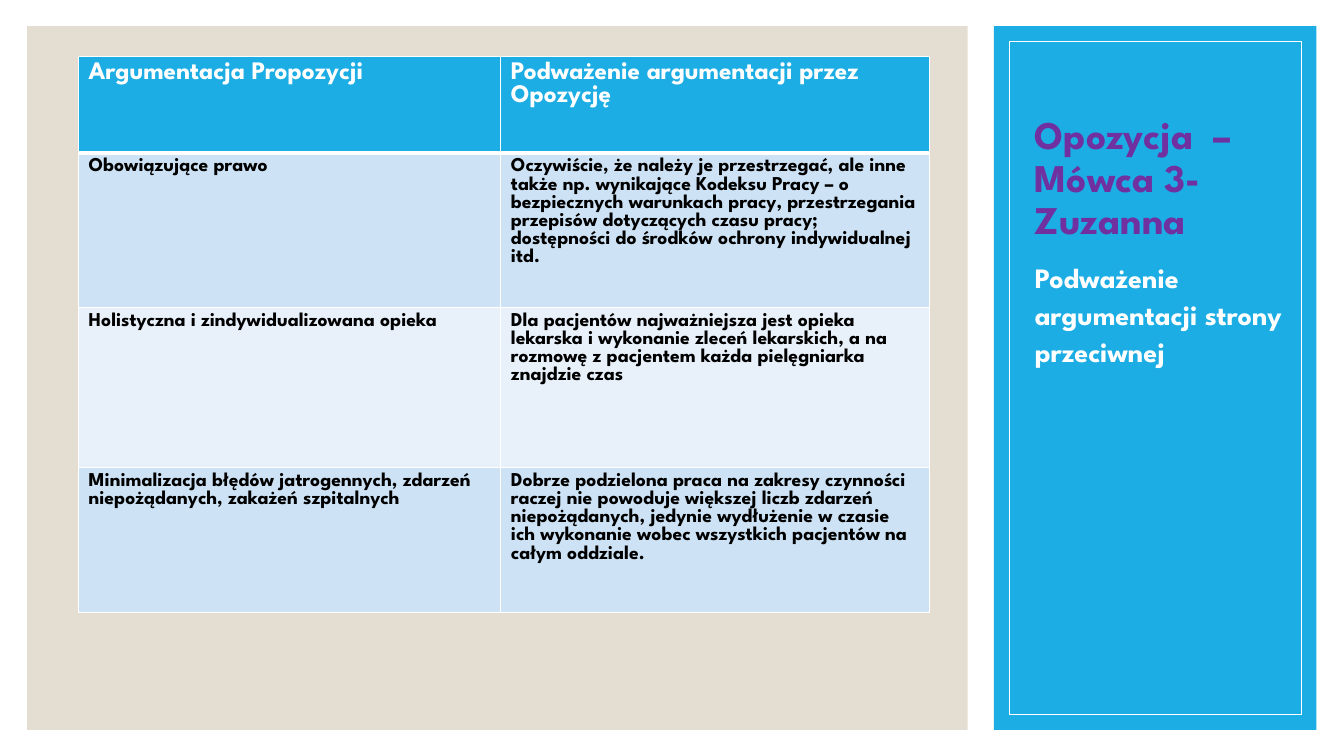
from dataclasses import dataclass
from lxml.etree import SubElement
from pptx import Presentation
from pptx.dml.color import RGBColor
from pptx.enum.shapes import MSO_SHAPE
from pptx.enum.text import MSO_ANCHOR
from pptx.oxml.ns import qn
from pptx.util import Pt


@dataclass(frozen=True)
class Theme:
    """Colours, font and type sizes of the slide."""
    font: str = "League Spartan"
    sand: str = "E3DED1"
    blue: str = "1CADE4"
    white: str = "FFFFFF"
    black: str = "000000"
    purple: str = "7030A0"
    bands: tuple = ("CDE3F5", "E8F1FA")
    title: int = 28
    lead: int = 20
    head: int = 18
    body: int = 14


THEME = Theme()
COLS = (301.7, 306)
HEIGHTS = (69.1, 110.2, 114.5, 103.7)
ROWS = (
    ("Argumentacja Propozycji", "Podważenie argumentacji przez Opozycję"),
    ("Obowiązujące prawo",
     "Oczywiście, że należy je przestrzegać, ale inne także np. wynikające "
     "Kodeksu Pracy – o bezpiecznych warunkach pracy, przestrzegania przepisów "
     "dotyczących czasu pracy; dostępności do środków ochrony indywidualnej  itd."),
    ("Holistyczna i zindywidualizowana opieka",
     "Dla pacjentów najważniejsza jest opieka lekarska i wykonanie zleceń "
     "lekarskich, a na rozmowę z pacjentem każda pielęgniarka znajdzie czas"),
    ("Minimalizacja błędów jatrogennych, zdarzeń niepożądanych, zakażeń szpitalnych",
     "Dobrze podzielona praca na zakresy czynności raczej nie powoduje większej "
     "liczb zdarzeń niepożądanych, jedynie wydłużenie w czasie ich wykonanie "
     "wobec wszystkich pacjentów na całym oddziale."),
)


def add_rect(slide, box, fill=None, line=None):
    """Draw a plain rectangle with an optional fill and outline."""
    rect = slide.shapes.add_shape(MSO_SHAPE.RECTANGLE, *map(Pt, box))
    rect.shadow.inherit = False
    if fill:
        rect.fill.solid()
        rect.fill.fore_color.rgb = RGBColor.from_string(fill)
    else:
        rect.fill.background()
    if line:
        rect.line.color.rgb = RGBColor.from_string(line)
        rect.line.width = Pt(0.5)
    else:
        rect.line.fill.background()


def add_run(para, text, size, color):
    """Add one bold run in the theme font."""
    run = para.add_run()
    run.text = text
    run.font.name = THEME.font
    run.font.size = Pt(size)
    run.font.bold = True
    run.font.color.rgb = RGBColor.from_string(color)


def add_text(slide, box, text, size, color, pitch, anchor=MSO_ANCHOR.TOP, before=0):
    """Place a wrapped text box with one paragraph."""
    frame = slide.shapes.add_textbox(*map(Pt, box)).text_frame
    frame.word_wrap = True
    frame.vertical_anchor = anchor
    para = frame.paragraphs[0]
    para.line_spacing = pitch
    para.space_before = Pt(before)
    add_run(para, text, size, color)


def set_edges(cell, head):
    """Give a cell white borders, with a thick one below the header."""
    props = cell._tc.get_or_add_tcPr()
    widths = {"a:lnL": 1, "a:lnR": 1, "a:lnT": 1, "a:lnB": 3 if head else 1}
    for tag, width in widths.items():
        edge = SubElement(props, qn(tag), w=str(Pt(width)))
        fill = SubElement(edge, qn("a:solidFill"))
        SubElement(fill, qn("a:srgbClr"), val=THEME.white)


def add_grid(slide, left, top):
    """Build the table of arguments and replies."""
    grid = slide.shapes.add_table(
        len(ROWS), len(COLS), Pt(left), Pt(top), Pt(sum(COLS)), Pt(sum(HEIGHTS))).table
    for col, width in zip(grid.columns, COLS):
        col.width = Pt(width)
    for r, (texts, height) in enumerate(zip(ROWS, HEIGHTS)):
        grid.rows[r].height = Pt(height)
        head = r == 0
        fill = THEME.blue if head else THEME.bands[(r - 1) % 2]
        size = THEME.head if head else THEME.body
        color = THEME.white if head else THEME.black
        for c, text in enumerate(texts):
            cell = grid.cell(r, c)
            set_edges(cell, head)
            cell.fill.solid()
            cell.fill.fore_color.rgb = RGBColor.from_string(fill)
            add_run(cell.text_frame.paragraphs[0], text, size, color)


def add_main(slide, box):
    """Fill the main panel with its table."""
    left, top, _, _ = box
    add_rect(slide, box, THEME.sand)
    add_grid(slide, left + 36.7, top + 21.6)


def add_side(slide, box):
    """Fill the side panel with its frame, title and lead."""
    left, top, width, height = box
    gap = 10.8
    add_rect(slide, box, THEME.blue)
    add_rect(slide, (left + gap, top + gap, width - 2 * gap, height - 2 * gap),
             line=THEME.white)
    add_text(slide, (left + 22.3, top + 28.8, 191.5, 129.6),
             "Opozycja  – Mówca 3-Zuzanna", THEME.title, THEME.purple, 0.9,
             MSO_ANCHOR.BOTTOM)
    add_text(slide, (left + 22.3, top + 161.3, 191.5, 275.8),
             "Podważenie argumentacji strony przeciwnej", THEME.lead, THEME.white,
             1.1, before=8)


def main():
    """Build and save the slide."""
    deck = Presentation()
    deck.slide_width, deck.slide_height = Pt(960), Pt(540)
    slide = deck.slides.add_slide(deck.slide_layouts[6])
    add_main(slide, (19.4, 18.7, 671.8, 502.6))
    add_side(slide, (709.9, 18.7, 230.4, 502.6))
    deck.save("out.pptx")


if __name__ == "__main__":
    main()
